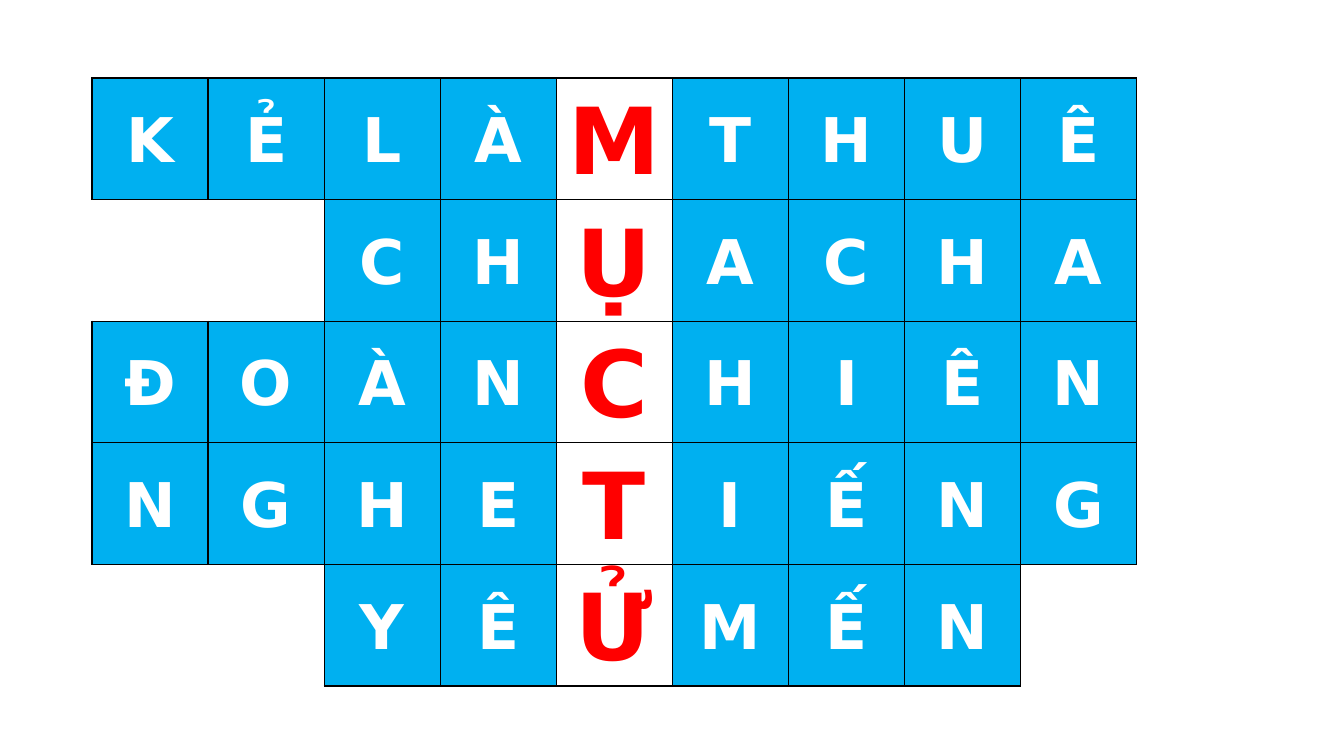
from lxml.etree import SubElement
from pptx import Presentation
from pptx.dml.color import RGBColor
from pptx.enum.text import MSO_ANCHOR, PP_ALIGN
from pptx.oxml.ns import qn
from pptx.util import Pt

BLUE = RGBColor(0x00, 0xB0, 0xF0)
WHITE = RGBColor(0xFF, 0xFF, 0xFF)
RED = RGBColor(0xFF, 0x00, 0x00)
BLACK = RGBColor(0x00, 0x00, 0x00)
EMU_PER_INCH = 914400
PX_PER_INCH = 100.8

ANSWERS = [
    "KẺLÀMTHUÊ ",
    "  CHỤACHA ",
    "ĐOÀNCHIÊN ",
    "NGHETIẾNG ",
    "  YÊỬMẾN  ",
]
KEY_COLUMN = 4
SIDES = {"a:lnL": (0, -1), "a:lnR": (0, 1), "a:lnT": (-1, 0), "a:lnB": (1, 0)}


def px(length):
    return round(length * EMU_PER_INCH / PX_PER_INCH)


def has_letter(row, column):
    inside = 0 <= row < len(ANSWERS) and 0 <= column < len(ANSWERS[0])
    return inside and ANSWERS[row][column] != " "


CELL_FORMAT = {
    "margin_left": px(7),
    "margin_right": px(7),
    "margin_top": 0,
    "margin_bottom": 0,
    "vertical_anchor": MSO_ANCHOR.MIDDLE,
}
PARA_FORMAT = {"alignment": PP_ALIGN.CENTER, "line_spacing": 1.07, "space_after": Pt(8)}
LETTER_FONT = {"name": "DejaVu Sans", "bold": True, "size": Pt(44)}
KEY_FONT = {**LETTER_FONT, "size": Pt(66)}

deck = Presentation()
deck.slide_width, deck.slide_height = px(1344), px(756)
page = deck.slides.add_slide(deck.slide_layouts[6])

crossword = page.shapes.add_table(
    len(ANSWERS), len(ANSWERS[0]), px(92), px(78), px(1161), px(608)
).table
crossword.first_row = False
crossword.horz_banding = False

for row, answer in enumerate(ANSWERS):
    for column, letter in enumerate(answer):
        cell = crossword.cell(row, column)
        filled = has_letter(row, column)
        properties = cell._tc.get_or_add_tcPr()
        for side, (down, across) in SIDES.items():
            border = SubElement(properties, qn(side), w=str(Pt(1)))
            if filled or has_letter(row + down, column + across):
                paint = SubElement(border, qn("a:solidFill"))
                SubElement(paint, qn("a:srgbClr"), val=str(BLACK))
            else:
                SubElement(border, qn("a:noFill"))
        if not filled:
            cell.fill.background()
            continue

        is_key = column == KEY_COLUMN
        cell.fill.solid()
        cell.fill.fore_color.rgb = WHITE if is_key else BLUE
        para = cell.text_frame.paragraphs[0]
        span = para.add_run()
        span.text = letter
        span.font.color.rgb = RED if is_key else WHITE
        formats = (
            (cell, CELL_FORMAT),
            (para, PARA_FORMAT),
            (span.font, KEY_FONT if is_key else LETTER_FONT),
        )
        for target, values in formats:
            for name, value in values.items():
                setattr(target, name, value)

deck.save("out.pptx")
